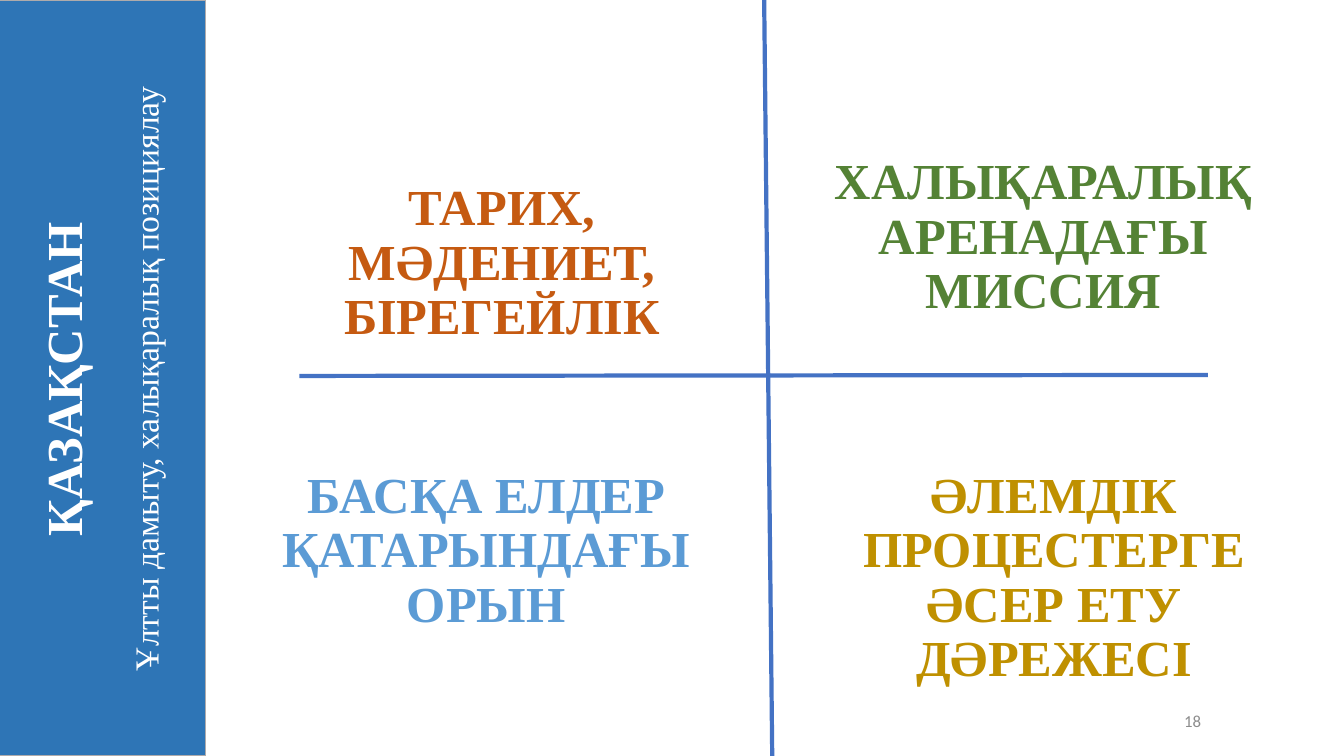
import pptx
import pptx.dml.color
import pptx.enum.shapes
import pptx.enum.text
import pptx.util
from dataclasses import dataclass
from lxml import etree

Align = pptx.enum.text.PP_ALIGN
Anchor = pptx.enum.text.MSO_ANCHOR
Rgb = pptx.dml.color.RGBColor.from_string
Pt = pptx.util.Pt


@dataclass(frozen=True)
class Theme:
    serif: str = "Times New Roman"
    sans: str = "Calibri"
    head: int = 36
    sub: int = 24
    small: int = 12
    white: str = "FFFFFF"
    gray: str = "8C8C8C"
    edge: str = "AFABAB"
    panel: str = "2E75B6"
    axis: str = "4472C4"
    green: str = "548235"
    gold: str = "BF9000"
    blue: str = "5B9BD5"
    rust: str = "C55A11"


def apply(item, form):
    for name, value in form.items():
        setattr(item, name, value)


class Board:
    def __init__(self, deck, theme):
        self.theme = theme
        self.wide = deck.slide_width
        self.high = deck.slide_height
        self.slide = deck.slides.add_slide(deck.slide_layouts[6])

    def span(self, box):
        sides = (self.wide, self.high) * 2
        return [round(side * share / 100) for side, share in zip(sides, box)]

    def panel(self, box, fill, edge):
        rect = self.slide.shapes.add_shape(
            pptx.enum.shapes.MSO_SHAPE.RECTANGLE, *self.span(box))
        rect.shadow.inherit = False
        rect.fill.solid()
        rect.fill.fore_color.rgb = Rgb(fill)
        rect.line.color.rgb = Rgb(edge)
        rect.line.width = Pt(1)

    def axis(self, ends):
        line = self.slide.shapes.add_connector(
            pptx.enum.shapes.MSO_CONNECTOR.STRAIGHT, *self.span(ends))
        line.line.color.rgb = Rgb(self.theme.axis)
        line.line.width = Pt(3)
        props = line._element.spPr
        etree.SubElement(props, pptx.oxml.ns.qn("a:effectLst"))

    def text(self, box, parts, color, turn=0, anchor=Anchor.TOP):
        shape = self.slide.shapes.add_textbox(*self.span(box))
        shape.rotation = turn
        frame = shape.text_frame
        apply(frame, {"word_wrap": True, "vertical_anchor": anchor})
        for index, (words, font, form) in enumerate(parts):
            para = frame.add_paragraph() if index else frame.paragraphs[0]
            apply(para, form)
            run = para.add_run()
            run.text = words
            apply(run.font, font)
            run.font.color.rgb = Rgb(color)


def main():
    deck = pptx.Presentation()
    deck.slide_width = pptx.util.Inches(13.33)
    deck.slide_height = pptx.util.Inches(7.5)
    theme = Theme()
    board = Board(deck, theme)

    bold = {"name": theme.serif, "size": Pt(theme.head), "bold": True}
    plain = {"name": theme.serif, "size": Pt(theme.sub), "bold": False}
    small = {"name": theme.sans, "size": Pt(theme.small)}
    mid = {"alignment": Align.CENTER, "line_spacing": 0.9,
           "space_before": Pt(10)}
    apart = {**mid, "space_before": Pt(26)}

    board.text((67.59, 92.67, 22.51, 5.33),
               [("18", small, {"alignment": Align.RIGHT})],
               theme.gray, anchor=Anchor.MIDDLE)

    fields = [
        ((56.04, 20, 43.21, 22.93), "ХАЛЫҚАРАЛЫҚ АРЕНАДАҒЫ МИССИЯ",
         theme.green),
        ((58.29, 61.47, 40.29, 17.6), "ӘЛЕМДІК ПРОЦЕСТЕРГЕ ӘСЕР ЕТУ ДӘРЕЖЕСІ",
         theme.gold),
        ((17.4, 61.47, 37.58, 19.07), "БАСҚА ЕЛДЕР ҚАТАРЫНДАҒЫ ОРЫН",
         theme.blue),
        ((18.6, 23.47, 37.51, 14.53), "ТАРИХ, МӘДЕНИЕТ, БІРЕГЕЙЛІК",
         theme.rust),
    ]
    for box, words, color in fields:
        board.text(box, [(words, bold, mid)], color)

    for ends in ((56.86, 0, 57.46, 100), (22.28, 49.73, 89.87, 49.6)):
        board.axis(ends)

    board.panel((-0.15, 0, 15.45, 100), theme.panel, theme.edge)
    board.text((-19.8, 36.4, 54.84, 27.47),
               [("ҚАЗАҚСТАН", bold, mid),
                ("Ұлтты дамыту, халықаралық позициялау", plain, apart)],
               theme.white, turn=270, anchor=Anchor.MIDDLE)

    deck.save("out.pptx")


if __name__ == "__main__":
    main()
